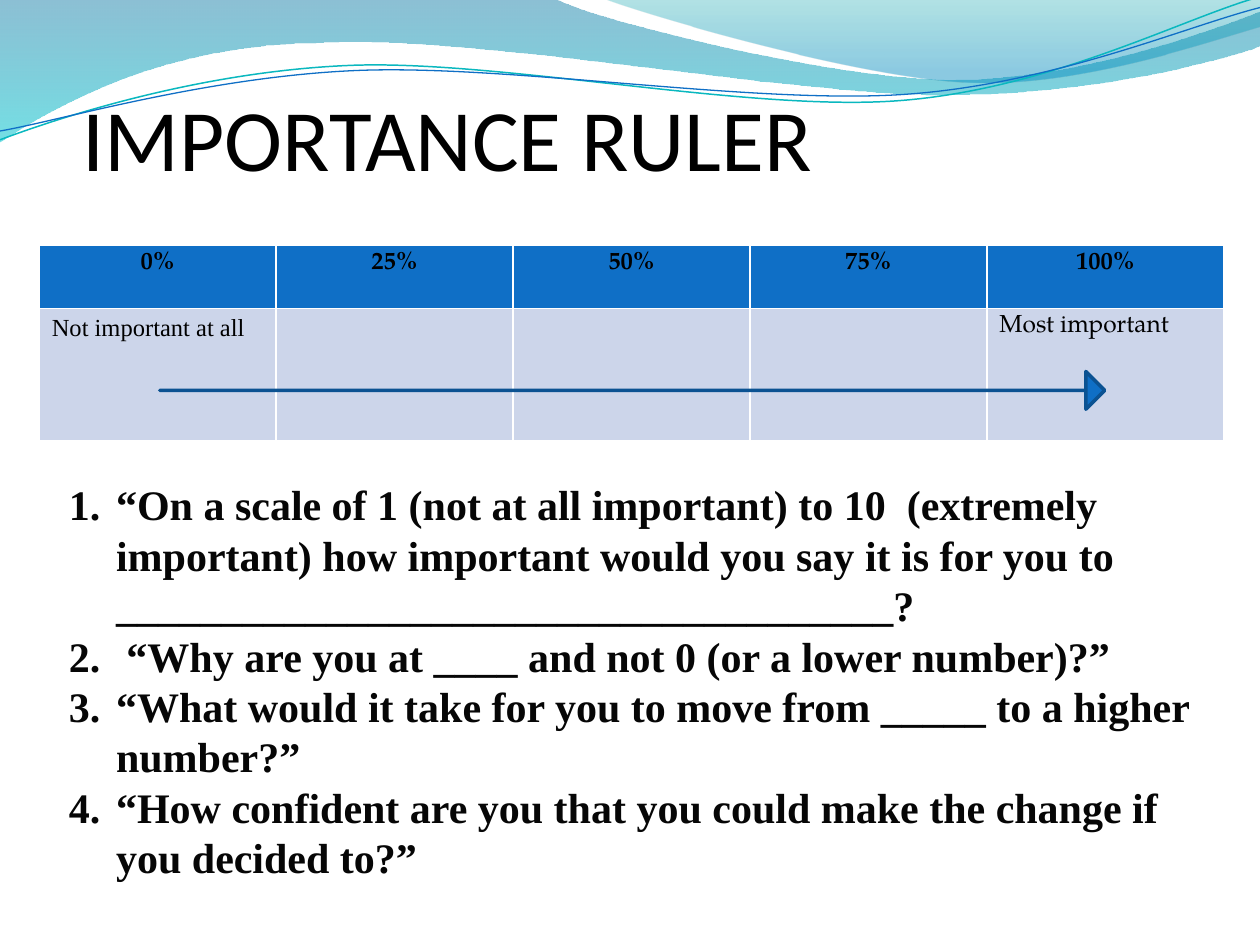
"""Build the importance ruler slide."""
from lxml import etree
from pptx import Presentation, util as u
from pptx.dml.color import RGBColor
from pptx.enum import shapes, text
from pptx.oxml.ns import qn

BLACK = RGBColor(0x00, 0x00, 0x00)
INK = RGBColor(0x06, 0x06, 0x06)
WHITE = RGBColor(0xFF, 0xFF, 0xFF)
BLUE = RGBColor(0x0F, 0x6F, 0xC6)
NAVY = RGBColor(0x0B, 0x52, 0x92)
PALE = RGBColor(0xCC, 0xD5, 0xEA)
AQUA = RGBColor(0x0A, 0xB8, 0xBF)
TEAL = RGBColor(0x00, 0xC6, 0xCF)
DEEP = RGBColor(0x00, 0x74, 0xA1)
SEA = RGBColor(0x00, 0xA1, 0xA9)
SKY = RGBColor(0x00, 0x8B, 0xBF)

SERIF = "Times New Roman"
BOOK = "TeX Gyre Pagella"
SANS = "Calibri"

BAND = [(0, -0.01), (4.4, -0.01), (4.76, 0.17, 6.64, 0.63, 7.58, 0.63),
        (8.53, 0.63, 9.58, 0.26, 10, 0.09), (10.01, 0.36),
        (9.83, 0.44, 8.7, 0.76, 7.46, 0.75),
        (6.22, 0.75, 3.82, 0.28, 2.57, 0.34),
        (1.29, 0.35, 0.46, 0.83, -0.01, 1.13)]
CREST = [(4.79, -0.01), (5.09, 0.11, 6.82, 0.62, 7.69, 0.65),
         (8.56, 0.69, 9.61, 0.32, 10, 0.21), (10, 0)]
UPPER = [(0, 1.11), (0.48, 0.93, 1.58, 0.57, 2.77, 0.52),
         (3.95, 0.47, 5.93, 0.89, 7.13, 0.8),
         (8.33, 0.71, 9.38, 0.15, 9.98, -0.02)]
LOWER = [(0, 1.04), (0.47, 0.96, 1.64, 0.61, 2.83, 0.56),
         (4.03, 0.51, 5.97, 0.83, 7.17, 0.75),
         (8.36, 0.67, 9.41, 0.21, 10, 0.06)]

HEADS = ["0%", "25%", "50%", "75%", "100%"]
ENDS = ["Not important at all", "", "", "", "Most important"]
ASKS = [
    "“On a scale of 1 (not at all important) to 10  (extremely important) "
    "how important would you say it is for you to " + "_" * 37 + "?",
    " “Why are you at ____ and not 0 (or a lower number)?”",
    "“What would it take for you to move from _____ to a higher number?”",
    "“How confident are you that you could make the change if you decided to?”",
]


class Deck:
    """Holds the style and the current slide."""

    def __init__(self):
        self.prs = Presentation()
        self.prs.slide_width, self.prs.slide_height = u.Cm(25.4), u.Cm(19.05)
        self.slide = self.prs.slides.add_slide(self.prs.slide_layouts[5])
        self.shapes = self.slide.shapes

    def style(self, para, font, size, color, bold=False):
        for run in para.runs:
            run.font.name, run.font.size = font, u.Pt(size)
            run.font.color.rgb, run.font.bold = color, bold

    def outline(self, path, close):
        pts = [(u.Cm(2.54 * part[i]), u.Cm(2.54 * part[i + 1]))
               for part in path for i in range(0, len(part), 2)]
        pen = self.shapes.build_freeform(*pts[0])
        pen.add_line_segments(pts[1:], close=close)
        shape = pen.convert_to_shape()
        shape.shadow.inherit = False
        self.bend(shape, path)
        return shape

    def bend(self, shape, path):
        nodes = iter(list(shape._element.iter(qn("a:lnTo"))))
        for part in path[1:]:
            first, *rest = [next(nodes) for _ in range(len(part) // 2)]
            if rest:
                first.tag = qn("a:cubicBezTo")
            for node in rest:
                first.append(node[0])
                node.getparent().remove(node)

    def wave(self, path, stops):
        shape = self.outline(path, True)
        shape.line.fill.background()
        shape.fill.gradient()
        shape.fill.gradient_angle = 270
        for stop, (pos, color, _) in zip(shape.fill.gradient_stops, stops):
            stop.position, stop.color.rgb = pos, color
        tints = shape._element.spPr.iter(qn("a:srgbClr"))
        for tint, (_, _, alpha) in zip(tints, stops):
            etree.SubElement(tint, qn("a:alpha"), val=str(alpha * 1000))

    def curve(self, path, color, width):
        shape = self.outline(path, False)
        shape.fill.background()
        shape.line.color.rgb, shape.line.width = color, u.Pt(width)

    def title(self, words):
        shape = self.shapes.title
        self.shapes._spTree.append(shape._element)
        shape.left, shape.top = u.Cm(1.27), u.Cm(0.64)
        shape.width, shape.height = u.Cm(22.86), u.Cm(3.18)
        frame = shape.text_frame
        frame.text = words
        frame.margin_left = frame.margin_right = frame.margin_bottom = 0
        frame.vertical_anchor = text.MSO_ANCHOR.BOTTOM
        frame.paragraphs[0].alignment = text.PP_ALIGN.LEFT
        self.style(frame.paragraphs[0], SANS, 50, BLACK)

    def border(self, cell):
        props = cell._tc.get_or_add_tcPr()
        for n, side in enumerate(("lnL", "lnR", "lnT", "lnB")):
            line = etree.Element(qn("a:" + side), w=str(u.Pt(1)))
            fill = etree.SubElement(line, qn("a:solidFill"))
            etree.SubElement(fill, qn("a:srgbClr"), val=str(WHITE))
            props.insert(n, line)

    def table(self, rows, highs):
        grid = self.shapes.add_table(len(rows), len(rows[0]), u.Cm(0.79), u.Cm(4.95),
                                     u.Cm(23.88), u.Cm(sum(highs))).table
        for r, row in enumerate(rows):
            grid.rows[r].height = u.Cm(highs[r])
            for c, words in enumerate(row):
                cell = grid.cell(r, c)
                cell.text = words
                cell.fill.solid()
                cell.fill.fore_color.rgb = PALE if r else BLUE
                self.border(cell)
                para = cell.text_frame.paragraphs[0]
                if r == 0:
                    para.alignment = text.PP_ALIGN.CENTER
                font = SERIF if r and c == 0 else BOOK
                self.style(para, font, 14, BLACK, r == 0)

    def arrow(self):
        shape = self.shapes.add_shape(shapes.MSO_SHAPE.RIGHT_ARROW, u.Cm(3.22),
                                      u.Cm(7.49), u.Cm(19.05), u.Cm(0.76))
        shape.shadow.inherit = False
        shape.adjustments[0], shape.adjustments[1] = 0, 0.5
        shape.fill.solid()
        shape.fill.fore_color.rgb = BLUE
        shape.line.color.rgb, shape.line.width = NAVY, u.Pt(2)

    def steps(self, items):
        box = self.shapes.add_textbox(u.Cm(1.14), u.Cm(9.53), u.Cm(23.37), u.Cm(9.32))
        frame = box.text_frame
        frame.word_wrap = True
        frame.text = "\n".join(items)
        for para in frame.paragraphs:
            para.line_spacing = u.Pt(28.8)
            self.style(para, SERIF, 24, INK, True)
            props = para._p.get_or_add_pPr()
            props.set("marL", str(u.Cm(0.95)))
            props.set("indent", str(u.Cm(-0.95)))
            etree.SubElement(props, qn("a:buAutoNum"), type="arabicPeriod")


def main():
    deck = Deck()
    deck.wave(BAND, [(0, DEEP, 45), (1, TEAL, 55)])
    deck.wave(CREST, [(0, SEA, 30), (0.8, SKY, 45)])
    deck.curve(UPPER, AQUA, 0.85)
    deck.curve(LOWER, BLUE, 0.75)
    deck.title(" IMPORTANCE RULER")
    deck.table([HEADS, ENDS], [1.27, 2.67])
    deck.arrow()
    deck.steps(ASKS)
    deck.prs.save("out.pptx")


if __name__ == "__main__":
    main()
